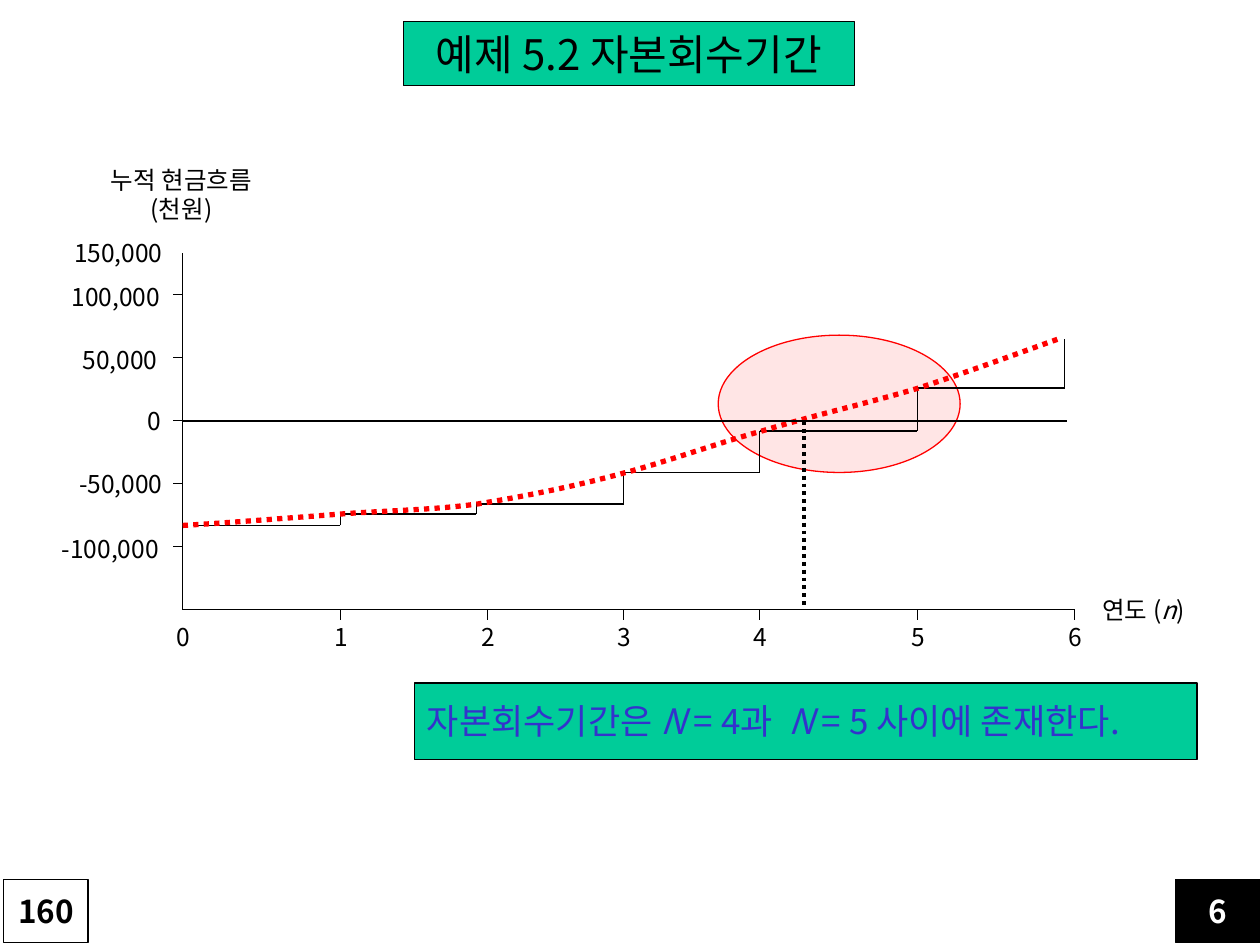
from itertools import pairwise

from lxml import etree
from pptx import Presentation
from pptx.dml.color import RGBColor
from pptx.enum import dml, shapes, text
from pptx.oxml.ns import qn
from pptx.util import Inches, Pt

FONT = "Noto Sans CJK KR"
LEFT, BASE, ZERO = 1.45, 4.84, 3.34
YEARS = [LEFT, 2.7, 3.87, 4.95, 6.03, 7.28, 8.53]
TICKS = [2.34, 2.84, ZERO, 3.84, 4.34]
# right edge and top of each value label
VALUES = [("150,000", 1.39, 1.84), ("100,000", 1.37, 2.19),
          ("50,000", 1.35, 2.69), ("0", 1.38, 3.17),
          ("-50,000", 1.39, 3.67), ("-100,000", 1.36, 4.19)]
STEPS = [(1.53, 4.17), (2.7, 4.08), (3.78, 4), (4.95, 3.75),
         (6.03, 3.42), (7.28, 3.08), (8.45, 2.69)]
# start point, then two handles and an end point for each curve piece
CURVE = [(1.45, 4.17), (1.66, 4.16), (2.31, 4.11), (2.7, 4.08),
         (3.09, 4.05), (3.41, 4.05), (3.79, 4), (4.16, 3.94),
         (4.56, 3.86), (4.93, 3.76), (5.31, 3.66), (5.65, 3.53),
         (6.05, 3.42), (6.44, 3.3), (6.89, 3.2), (7.29, 3.08),
         (7.69, 2.95), (8.2, 2.76), (8.43, 2.68)]
CENTER, RIGHT = text.PP_ALIGN.CENTER, text.PP_ALIGN.RIGHT


def color(code):
    return RGBColor.from_string(code)


def pen(item, code, width, dash=None):
    item.line.color.rgb = color(code)
    item.line.width = Pt(width)
    if dash:
        item.line.dash_style = dash


def set_font(font, size, code, bold):
    """Style the font for Latin and East Asian letters alike."""
    font.size, font.name, font.bold = Pt(size), FONT, bold
    font.color.rgb = color(code)
    etree.SubElement(font._element, qn("a:ea")).set("typeface", FONT)


def write(shape, lines, size, code="000000", align=None, wrap=False, bold=False):
    """Fill the shape with lines, each a list of (words, italic) runs."""
    frame = shape.text_frame
    frame.word_wrap = wrap
    frame.auto_size = text.MSO_AUTO_SIZE.NONE
    for i, line in enumerate(lines):
        para = frame.add_paragraph() if i else frame.paragraphs[0]
        para.alignment = align
        for words, italic in line:
            run = para.add_run()
            run.text = words
            set_font(run.font, size, code, bold)
            run.font.italic = italic


def add_text(slide, box, lines, size=14, **style):
    shape = slide.shapes.add_textbox(*map(Inches, box))
    write(shape, lines, size, **style)


def add_line(slide, start, end, width=0.75, dash=None):
    line = slide.shapes.add_connector(
        shapes.MSO_CONNECTOR.STRAIGHT, *map(Inches, (*start, *end)))
    pen(line, "000000", width, dash)
    etree.SubElement(line._element.spPr, qn("a:effectLst"))


def add_box(slide, box, fill, edge="000000", kind=shapes.MSO_SHAPE.RECTANGLE):
    shape = slide.shapes.add_shape(kind, *map(Inches, box))
    shape.shadow.inherit = False
    shape.fill.solid()
    shape.fill.fore_color.rgb = color(fill)
    pen(shape, edge, 0.75)
    return shape


def add_title(slide):
    title = slide.shapes.title
    title.left, title.top, title.width, title.height = map(
        Inches, (3.2, 0.17, 3.58, 0.51))
    title.fill.solid()
    title.fill.fore_color.rgb = color("00CC99")
    pen(title, "000000", 0.75)
    write(title, [[("예제 5.2 자본회수기간", False)]], 24, align=CENTER)


def add_zone(slide):
    zone = add_box(slide, (5.7, 2.66, 1.92, 1.09), "FF0000", "FF0000",
                   shapes.MSO_SHAPE.OVAL)
    tint = zone.fill._xPr.find(qn("a:solidFill"))[0]
    etree.SubElement(tint, qn("a:alpha")).set("val", "10000")


def add_axes(slide):
    add_line(slide, (LEFT, 2.01), (LEFT, BASE))
    add_line(slide, (LEFT, BASE), (YEARS[-1], BASE))
    for x in YEARS[1:]:
        add_line(slide, (x, BASE), (x, BASE + 0.08))
    for y in TICKS:
        add_line(slide, (LEFT, y), (LEFT - 0.08, y))
    for words, edge, top in VALUES:
        add_text(slide, (edge - 1.03, top, 1.03, 0.33), [[(words, False)]],
                 align=RIGHT)
    for year, x in enumerate(YEARS):
        add_text(slide, (x - 0.15, 4.89, 0.31, 0.33), [[(str(year), False)]],
                 align=RIGHT)
    add_text(slide, (8.62, 4.67, 0.88, 0.57),
             [[("연도 (", False), ("n", True), (")", False)]],
             align=RIGHT, wrap=True)
    add_text(slide, (0.72, 1.26, 1.44, 0.57),
             [[("누적 현금흐름", False)], [("(천원)", False)]], align=CENTER)


def add_steps(slide):
    for (x, y), (after, rise) in pairwise(STEPS):
        add_line(slide, (x, y), (after, y))
        add_line(slide, (after, y), (after, rise))


def bezier(a, b, c, d, t):
    s = 1 - t
    return tuple(s**3 * p + 3 * s * s * t * q + 3 * s * t * t * r + t**3 * v
                 for p, q, r, v in zip(a, b, c, d))


def add_curve(slide, parts=12):
    """Draw the smooth trend; points are in EMU, as a path keeps whole units."""
    points = [tuple(map(Inches, bezier(*CURVE[i:i + 4], n / parts)))
              for i in range(0, len(CURVE) - 1, 3)
              for n in range(1, parts + 1)]
    path = slide.shapes.build_freeform(*map(Inches, CURVE[0]))
    path.add_line_segments(points, close=False)
    curve = path.convert_to_shape()
    curve.shadow.inherit = False
    curve.fill.background()
    pen(curve, "FF0000", 3, dml.MSO_LINE.ROUND_DOT)


def add_answer(slide):
    add_box(slide, (3.29, 5.42, 6.21, 0.61), "00CC99")
    runs = [("자본회수기간은 ", False), ("N", True), (" = 4과  ", False),
            ("N", True), (" = 5 사이에 존재한다.", False)]
    add_text(slide, (3.29, 5.5, 6.33, 0.44), [runs], 20, code="3333CC", wrap=True)


def add_badge(slide, left, words, fill, ink):
    badge = add_box(slide, (left, 6.98, 0.67, 0.5), fill)
    badge.text_frame.vertical_anchor = text.MSO_ANCHOR.MIDDLE
    write(badge, [[(words, False)]], 18, code=ink, align=CENTER, bold=True)


def main():
    deck = Presentation()
    deck.slide_width, deck.slide_height = Inches(10), Inches(7.5)
    slide = deck.slides.add_slide(deck.slide_layouts[5])
    add_title(slide)
    add_zone(slide)
    add_axes(slide)
    add_steps(slide)
    add_curve(slide)
    add_line(slide, (LEFT, ZERO), (8.47, ZERO), 1)
    add_line(slide, (6.38, ZERO), (6.38, BASE), 2.25, dml.MSO_LINE.ROUND_DOT)
    add_answer(slide)
    add_badge(slide, 9.33, "6", "000000", "FFFFFF")
    add_badge(slide, 0.03, "160", "FFFFFF", "000000")
    deck.save("out.pptx")


if __name__ == "__main__":
    main()
